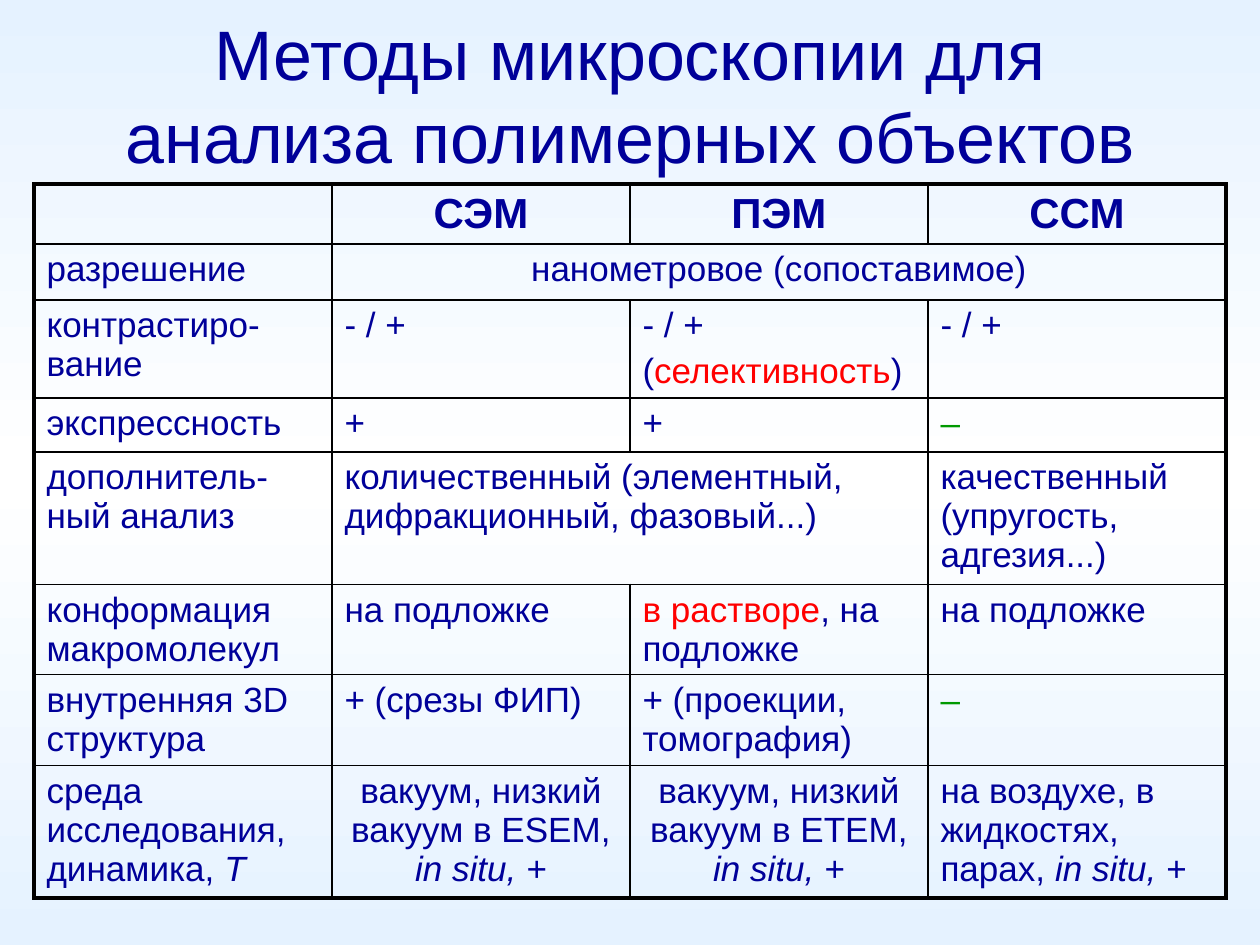
from lxml.etree import SubElement
from pptx import Presentation
from pptx.dml.color import RGBColor
from pptx.enum.text import MSO_ANCHOR, PP_ALIGN
from pptx.oxml.ns import qn
from pptx.util import Pt

PX = 914400 // 126
NAVY, RED, GREEN, BLACK = "000099", "FF0000", "009900", "000000"
BACKGROUND = [(0, "E5F2FF"), (50, "FFFFFF"), (100, "E5F2FF")]

TITLE = "Методы микроскопии для анализа полимерных объектов"
HEADERS = ["", "СЭМ", "ПЭМ", "ССМ"]
IN_SITU = ("in situ, +", {"italic": True})
MINUS = [[("–", {"color": GREEN})]]
ROWS = [
    ["разрешение", "нанометровое (сопоставимое)", "", ""],
    ["контрастиро-вание", "- / +",
     [["- / +"], ["(", ("селективность", {"color": RED}), ")"]], "- / +"],
    ["экспрессность", "+", "+", MINUS],
    ["дополнитель-ный анализ",
     "количественный (элементный, дифракционный, фазовый...)", "",
     "качественный (упругость, адгезия...)"],
    ["конформация макромолекул", "на подложке",
     [[("в растворе", {"color": RED}), ", на подложке"]], "на подложке"],
    ["внутренняя 3D структура", "+ (срезы ФИП)", "+ (проекции, томография)", MINUS],
    [[["среда исследования, динамика, ", ("T", {"italic": True})]],
     [["вакуум, низкий вакуум в ESEM, ", IN_SITU]],
     [["вакуум, низкий вакуум в EТEM, ", IN_SITU]],
     [["на воздухе, в жидкостях, парах, ", IN_SITU]]],
]
SPANS = {(1, 1): 3, (4, 1): 2}
CENTERED = {(1, 1), (7, 1), (7, 2)}
ROW_HEIGHTS = [60, 56, 98, 54, 130, 90, 91, 130]
COLUMN_WIDTH = 298
TABLE_LEFT, TABLE_TOP = 34, 184


def rgb(color):
    return RGBColor.from_string(color)


def write(frame, text, size=20, color=NAVY, bold=False, centered=False, before=0):
    paragraphs = [[text]] if isinstance(text, str) else text
    frame.word_wrap = True
    for index, parts in enumerate(paragraphs):
        paragraph = frame.add_paragraph() if index else frame.paragraphs[0]
        paragraph.alignment = PP_ALIGN.CENTER if centered else PP_ALIGN.LEFT
        spacing = SubElement(paragraph._p.get_or_add_pPr(), qn("a:spcBef"))
        SubElement(spacing, qn("a:spcPct"), val=str(before * 1000))
        for part in parts:
            words, style = (part, {}) if isinstance(part, str) else part
            run = paragraph.add_run()
            run.text = words
            run.font.name = "Arial"
            run.font.size = Pt(size)
            run.font.bold = bold
            run.font.italic = style.get("italic", False)
            run.font.color.rgb = rgb(style.get("color", color))


def add_color(parent, color):
    SubElement(parent, qn("a:srgbClr"), val=color)


def paint_background(slide, stops):
    fill = slide.background.fill
    fill.gradient()
    gradient = slide.background._cSld.find(".//" + qn("a:gradFill"))
    stop_list = gradient.find(qn("a:gsLst"))
    for stop in list(stop_list):
        stop_list.remove(stop)
    for position, color in stops:
        add_color(SubElement(stop_list, qn("a:gs"), pos=str(position * 1000)), color)
    gradient.find(qn("a:lin")).set("ang", "5400000")


def draw_borders(cell, outer_sides):
    properties = cell._tc.get_or_add_tcPr()
    for side in "LRTB":
        width = Pt(2.25 if side in outer_sides else 1)
        line = SubElement(properties, qn("a:ln" + side), w=str(int(width)))
        add_color(SubElement(line, qn("a:solidFill")), BLACK)


def add_comparison(slide):
    content = [HEADERS] + ROWS
    last_row, last_column = len(content) - 1, len(HEADERS) - 1
    table = slide.shapes.add_table(
        len(content), len(HEADERS), TABLE_LEFT * PX, TABLE_TOP * PX,
        COLUMN_WIDTH * len(HEADERS) * PX, sum(ROW_HEIGHTS) * PX).table
    table.first_row = table.horz_banding = False
    for column in table.columns:
        column.width = COLUMN_WIDTH * PX
    for row, height in zip(table.rows, ROW_HEIGHTS):
        row.height = height * PX
    for (r, c), span in SPANS.items():
        table.cell(r, c).merge(table.cell(r, c + span - 1))
    for r, texts in enumerate(content):
        for c, text in enumerate(texts):
            cell = table.cell(r, c)
            end = c + SPANS.get((r, c), 1) - 1
            edges = {"L": c == 0, "R": end == last_column, "T": r == 0, "B": r == last_row}
            draw_borders(cell, [side for side, outer in edges.items() if outer])
            cell.fill.background()
            cell.margin_bottom = 0
            header = r == 0
            write(cell.text_frame, text, size=24 if header else 20, bold=header,
                  centered=header or (r, c) in CENTERED, before=20)


def main():
    presentation = Presentation()
    presentation.slide_width, presentation.slide_height = 1260 * PX, 945 * PX
    slide = presentation.slides.add_slide(presentation.slide_layouts[6])
    paint_background(slide, BACKGROUND)
    title = slide.shapes.add_textbox(95 * PX, 15 * PX, 1070 * PX, 158 * PX).text_frame
    title.vertical_anchor = MSO_ANCHOR.MIDDLE
    write(title, TITLE, size=40, centered=True)
    add_comparison(slide)
    presentation.save("out.pptx")


if __name__ == "__main__":
    main()
